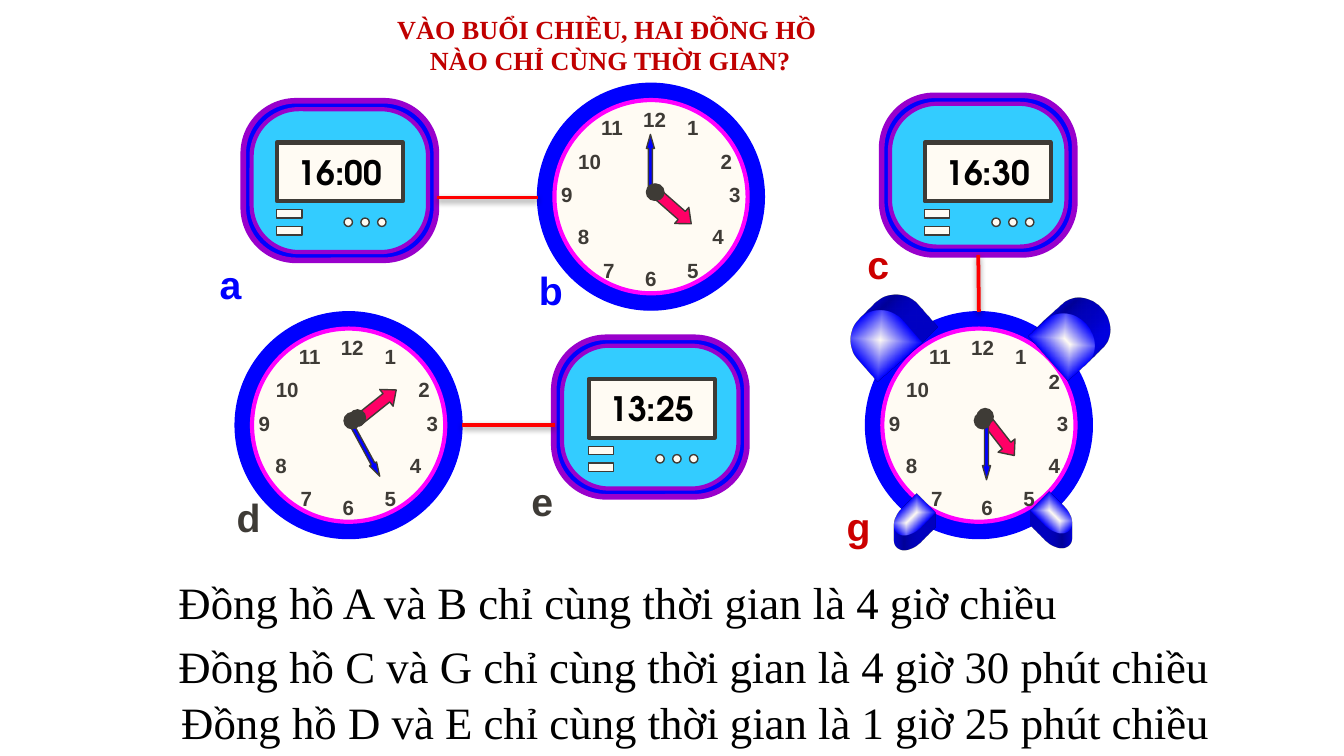
from pptx import Presentation
from pptx.dml.color import RGBColor
from pptx.enum.shapes import MSO_CONNECTOR, MSO_SHAPE
from pptx.enum.text import MSO_ANCHOR, PP_ALIGN
from pptx.oxml import parse_xml
from pptx.oxml.ns import nsdecls, qn
from pptx.util import Inches, Pt

BLUE, CREAM, DARK, RED, PURPLE = "0000FF", "FFFBF3", "3E3B36", "CC0000", "9900CC"
UNIT = 1 / 16
DIAL_SIZE, FACE_SIZE = 27 * UNIT, 23 * UNIT
NUMERAL_HEIGHT, HUB_SIZE = 0.29, 0.12
HUB_CENTER = (0.87, 0.81)

TITLE = "VÀO BUỔI CHIỀU, HAI ĐỒNG HỒ \nNÀO CHỈ CÙNG THỜI GIAN?"
ANSWERS = [
    ("Đồng hồ A và B chỉ cùng thời gian là 4 giờ chiều", 1.23, 4.23, 6.84),
    ("Đồng hồ C và G chỉ cùng thời gian là 4 giờ 30 phút chiều", 1.23, 4.70, 7.94),
    ("Đồng hồ D và E chỉ cùng thời gian là 1 giờ 25 phút chiều", 1.25, 5.12, 7.92),
]
LABELS = [
    ("a", 1.56, 1.90, BLUE), ("b", 3.94, 1.94, BLUE), ("c", 6.38, 1.75, RED),
    ("d", 1.69, 3.63, DARK), ("e", 3.88, 3.51, DARK), ("g", 6.23, 3.70, RED),
]
DIGITAL_CLOCKS = {
    "a": {"time": "16:00", "case": (1.81, 0.75), "screen": (2.06, 1.06)},
    "c": {"time": "16:30", "case": (6.56, 0.71), "screen": (6.88, 1.06)},
    "e": {"time": "13:25", "case": (4.12, 2.51), "screen": (4.38, 2.82)},
}
NUMERALS = {
    12: (11, 2), 1: (16, 3), 2: (20, 7), 3: (21, 11), 4: (19, 16), 5: (16, 20),
    6: (11, 21), 7: (6, 20), 8: (3, 16), 9: (1, 11), 10: (3, 7), 11: (6, 3),
}
ALARM_NUMERALS = {2: (20, 6), 4: (20, 16), 5: (17, 20), 6: (12, 21)}
DIAL_CLOCKS = {
    "b": {"at": (4.00, 0.62), "hour": (1.00, 0.92, 41.3), "minute": (0.84, 0.60, 270),
          "joint": (0.88, 0.81), "moved": {}},
    "g": {"at": (6.44, 2.32), "hour": (0.99, 0.92, 52), "minute": (0.90, 1.03, 90),
          "joint": (0.89, 0.78), "moved": ALARM_NUMERALS},
    "d": {"at": (1.75, 2.32), "hour": (1.05, 0.70, 321.4), "minute": (0.97, 1.03, 61.5),
          "joint": (0.91, 0.79), "moved": {}},
}
BELLS = [(7.75, 2.32, 0.38, 0.44, 318.4), (6.33, 2.31, 0.44, 0.44, 228.8)]
FEET = [(6.63, 3.75, 0.31, 0.20, 314.9), (7.69, 3.74, 0.31, 0.20, 224.9)]
GRADIENT = f"""<a:gradFill {nsdecls('a')} rotWithShape="1"><a:gsLst>
<a:gs pos="0"><a:srgbClr val="{CREAM}"/></a:gs><a:gs pos="100000"><a:srgbClr val="{BLUE}"/></a:gs>
</a:gsLst><a:path path="shape"><a:fillToRect l="50000" t="50000" r="50000" b="50000"/></a:path></a:gradFill>"""
SCENE = """<a:scene3d {}><a:camera prst="legacyOblique{}"/>
<a:lightRig rig="legacyFlat3" dir="b"/></a:scene3d>"""
EXTRUSION = """<a:sp3d {} extrusionH="{}" prstMaterial="legacyMatte">
<a:extrusionClr><a:srgbClr val="{}"/></a:extrusionClr></a:sp3d>"""
LINE_SHADOW = f"""<a:effectLst {nsdecls('a')}><a:outerShdw blurRad="39400" dist="20300" dir="5400000">
<a:srgbClr val="000000"><a:alpha val="38000"/></a:srgbClr></a:outerShdw></a:effectLst>"""


def color(value):
    """Turn a hex string into a colour."""
    return RGBColor.from_string(value)


def format_text(shape, text, font, size, text_color, bold=True, align=PP_ALIGN.CENTER, wrap=True):
    """Fill a shape with text and format every run."""
    frame = shape.text_frame
    frame.text = text
    frame.word_wrap = wrap
    for paragraph in frame.paragraphs:
        paragraph.alignment = align
        for run in paragraph.runs:
            run.font.name, run.font.size, run.font.bold = font, Pt(size), bold
            run.font.color.rgb = color(text_color)
    return frame


def set_small_insets(frame):
    """Give a text frame narrow margins."""
    frame.margin_left = frame.margin_right = Inches(0.07)
    frame.margin_top = frame.margin_bottom = Inches(0.04)


def add_text(shapes, left, top, width, height, text, *style, **options):
    """Add a formatted text box and return its frame."""
    box = shapes.add_textbox(*map(Inches, (left, top, width, height)))
    return format_text(box, text, *style, **options)


def add_figure(shapes, kind, left, top, width, height, fill, line=DARK, weight=0.75, adjust=()):
    """Add a flat preset shape."""
    shape = shapes.add_shape(kind, *map(Inches, (left, top, width, height)))
    shape.shadow.inherit = False
    shape.fill.solid()
    shape.fill.fore_color.rgb = color(fill)
    shape.line.color.rgb = color(line)
    shape.line.width = Pt(weight)
    for index, value in enumerate(adjust):
        shape.adjustments[index] = value
    return shape


def add_digital_clock(shapes, time, case, screen):
    """Draw a digital clock and return its case."""
    left, top = case
    body = shapes.add_group_shape().shapes
    outer = add_figure(body, MSO_SHAPE.ROUNDED_RECTANGLE, left, top, FACE_SIZE, 19 * UNIT,
                       BLUE, PURPLE, 3, [0.33])
    add_figure(body, MSO_SHAPE.ROUNDED_RECTANGLE, left + UNIT, top + UNIT, 21 * UNIT, 17 * UNIT,
               "33CCFF", PURPLE, 2.25, [0.33])
    left, top = screen
    display = add_figure(shapes, MSO_SHAPE.RECTANGLE, left, top, 15 * UNIT, 7 * UNIT, CREAM, weight=2.25)
    frame = format_text(display, time, "TeX Gyre Adventor", 18, "000000", wrap=False)
    frame.vertical_anchor = MSO_ANCHOR.MIDDLE
    set_small_insets(frame)
    dots = shapes.add_group_shape().shapes
    for column in range(3):
        add_figure(dots, MSO_SHAPE.OVAL, left + (8 + 2 * column) * UNIT, top + 9 * UNIT, UNIT, UNIT, CREAM)
    buttons = shapes.add_group_shape().shapes
    for row in range(2):
        add_figure(buttons, MSO_SHAPE.RECTANGLE, left, top + (8 + 2 * row) * UNIT, 3 * UNIT, UNIT, CREAM)
    return outer


def add_dial_clock(shapes, at, hour, minute, joint, moved):
    """Draw a clock with hands and return its rim."""
    left, top = at
    dial = shapes.add_group_shape().shapes
    rim = add_figure(dial, MSO_SHAPE.OVAL, left, top, DIAL_SIZE, DIAL_SIZE, BLUE, BLUE)
    add_figure(dial, MSO_SHAPE.OVAL, left + 2 * UNIT, top + 2 * UNIT, FACE_SIZE, FACE_SIZE,
               CREAM, "FF00FF", 2.25)
    for number, (column, row) in {**NUMERALS, **moved}.items():
        add_text(dial, left + column * UNIT, top + row * UNIT, 0.4 if number > 9 else 0.31,
                 NUMERAL_HEIGHT, str(number), "Arial", 11, DARK,
                 align=PP_ALIGN.LEFT if number > 10 else PP_ALIGN.CENTER)
    hands = shapes.add_group_shape().shapes

    def add_part(kind, center, width, height, fill, rotation=0, adjust=()):
        """Add one part of the hands around its centre."""
        part = add_figure(hands, kind, left + center[0] - width / 2, top + center[1] - height / 2,
                          width, height, fill, adjust=adjust)
        part.rotation = rotation

    add_part(MSO_SHAPE.RIGHT_ARROW, hour[:2], 0.38, 0.16, "FF0066", hour[2], [0.5, 0.585])
    add_part(MSO_SHAPE.OVAL, joint, HUB_SIZE, HUB_SIZE, DARK)
    add_part(MSO_SHAPE.RIGHT_ARROW, minute[:2], 0.44, 0.06, BLUE, minute[2], [0.5, 1.75])
    add_part(MSO_SHAPE.OVAL, HUB_CENTER, HUB_SIZE, HUB_SIZE, DARK)
    return rim


def add_extruded(shapes, left, top, width, height, rotation, direction, depth):
    """Add an extruded bell or foot of the alarm clock."""
    part = add_figure(shapes, MSO_SHAPE.FLOWCHART_DELAY, left, top, width, height, BLUE)
    part.rotation = rotation
    part.line.fill.background()
    properties = part.element.spPr
    properties.replace(properties.find(qn("a:solidFill")), parse_xml(GRADIENT))
    properties.append(parse_xml(SCENE.format(nsdecls("a"), direction)))
    properties.append(parse_xml(EXTRUSION.format(nsdecls("a"), depth, BLUE)))
    return properties


def add_link(shapes, start, end):
    """Add a red line with a soft shadow."""
    link = shapes.add_connector(MSO_CONNECTOR.STRAIGHT, *map(Inches, (*start, *end)))
    link.line.color.rgb = color("FF0000")
    link.line.width = Pt(2)
    link.element.spPr.append(parse_xml(LINE_SHADOW))
    return link


def main():
    """Build the slide of matching clocks."""
    presentation = Presentation()
    presentation.slide_width, presentation.slide_height = Inches(10), Inches(10 * 9 / 16)
    slide = presentation.slides.add_slide(presentation.slide_layouts[5])
    shapes = slide.shapes
    title = shapes.title
    title.left, title.top, title.width, title.height = map(Inches, (0.59, 0.05, 7.9, 0.57))
    format_text(title, TITLE, "Times New Roman", 14, "C00000").vertical_anchor = MSO_ANCHOR.TOP
    clocks = {name: add_digital_clock(shapes, **clock) for name, clock in DIGITAL_CLOCKS.items()}
    clocks.update({name: add_dial_clock(shapes, **clock) for name, clock in DIAL_CLOCKS.items()})
    for text, left, top, label_color in LABELS:
        set_small_insets(add_text(shapes, left, top, 0.31, 0.43, text, "Arial", 21, label_color))
    for bell in BELLS:
        add_extruded(shapes, *bell, "TopRight", 300000)
    for foot in FEET:
        properties = add_extruded(shapes, *foot, "Bottom", 200000)
        properties.xfrm.set("flipH", "1")
        properties.xfrm.set("flipV", "1")
    for text, left, top, width in ANSWERS:
        add_text(shapes, left, top, width, 0.5, text, "Times New Roman", 24, "000000",
                 bold=False, align=PP_ALIGN.LEFT, wrap=False)
    add_link(shapes, (3.25, 1.47), (4, 1.47))
    add_link(shapes, (3.44, 3.16), (4.13, 3.16))
    alarm_link = add_link(shapes, (7.28, 1.9), (7.28, 2.32))
    alarm_link.begin_connect(clocks["c"], 2)
    alarm_link.end_connect(clocks["g"], 0)
    presentation.save("out.pptx")


if __name__ == "__main__":
    main()
